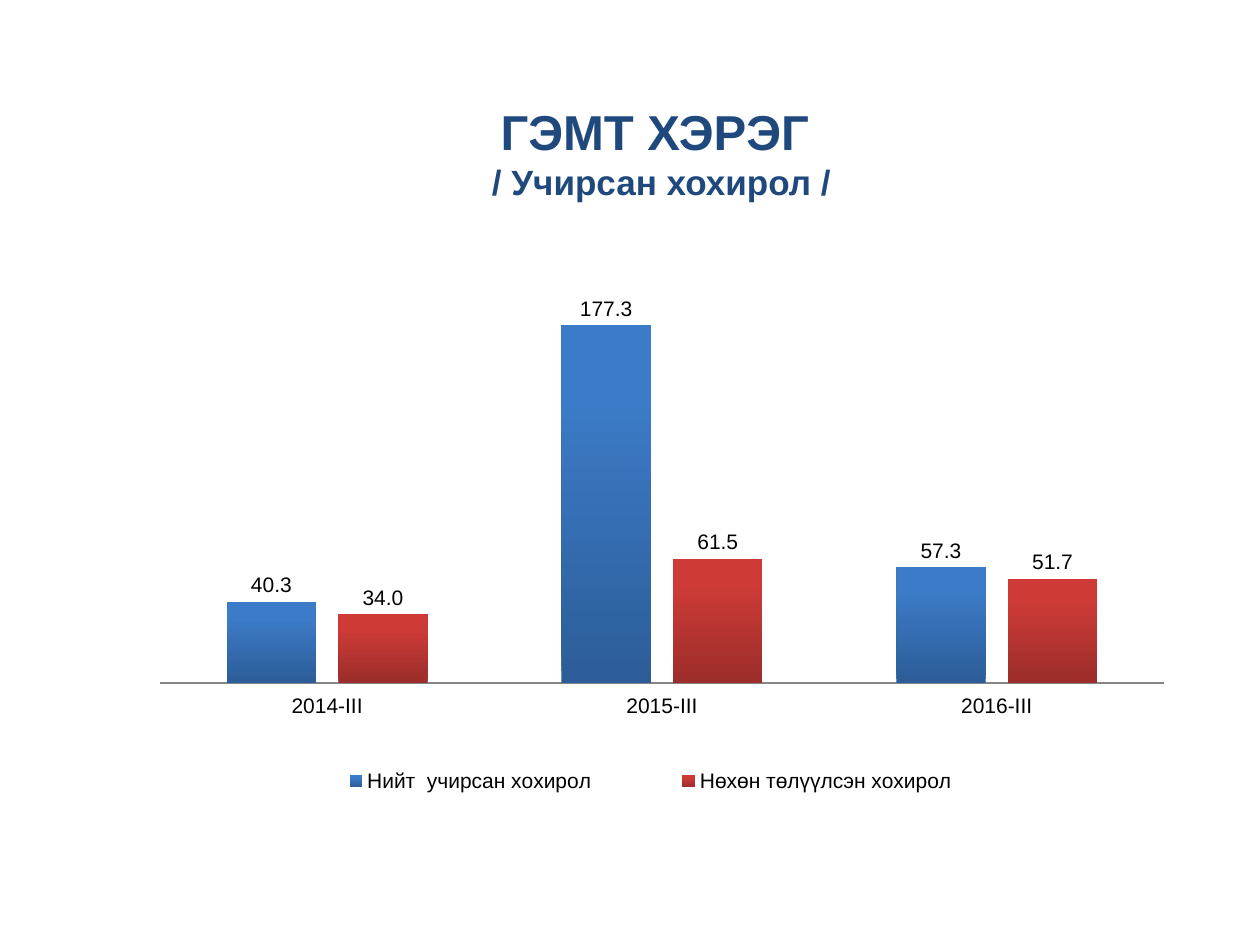
from lxml.etree import SubElement as Sub
from pptx import Presentation
from pptx.chart.data import CategoryChartData as Data
from pptx.dml.color import RGBColor as RGB
from pptx.enum.chart import XL_CHART_TYPE as Kind
from pptx.enum.chart import XL_LABEL_POSITION as Spot
from pptx.enum.chart import XL_LEGEND_POSITION as Side
from pptx.enum.chart import XL_TICK_LABEL_POSITION as Label
from pptx.enum.chart import XL_TICK_MARK as Tick
from pptx.enum.text import MSO_ANCHOR as Anchor
from pptx.enum.text import PP_ALIGN as Align
from pptx.oxml import parse_xml
from pptx.oxml.ns import nsdecls, qn
from pptx.util import Inches, Pt

FONT = "Arial"
COLORS = {"title": "1F497D", "text": "000000", "axis": "868686", "edge": "FFFFFF",
          "blue": ("2C5D98", "3C7BC7"), "red": ("9B2D2A", "CE3B37")}
PERIODS = ["2014-III", "2015-III", "2016-III"]
SERIES = [("Нийт  учирсан хохирол", (40.3, 177.3, 57.3), "blue"),
          ("Нөхөн төлүүлсэн хохирол", (34, 61.5, 51.7), "red")]


def style(font, size, color, bold=False):
    """Set the face, size, colour and weight of a font."""
    font.name, font.size, font.bold = FONT, Pt(size), bold
    font.color.rgb = RGB.from_string(COLORS[color])


def add_title(slide):
    """Add the two-line heading."""
    box = slide.shapes.add_textbox(Inches(1), Inches(0.58), Inches(8.5), Inches(1.25))
    frame = box.text_frame
    frame.word_wrap = True
    frame.vertical_anchor = Anchor.MIDDLE
    para = frame.paragraphs[0]
    para.alignment = Align.CENTER
    head = para.add_run()
    head.text = "ГЭМТ ХЭРЭГ "
    style(head.font, 28, "title", True)
    para.add_line_break()
    sub = para.add_run()
    sub.text = "/ Учирсан хохирол /"
    style(sub.font, 20, "title", True)


def make_layout(x, y, w, h, inner=False):
    """Return a manual layout in fractions of the chart."""
    layout = parse_xml(f"<c:layout {nsdecls('c')}><c:manualLayout/></c:layout>")
    manual = layout[0]
    parts = [("layoutTarget", "inner")] if inner else []
    parts += [("xMode", "edge"), ("yMode", "edge"), ("x", x), ("y", y), ("w", w), ("h", h)]
    for name, val in parts:
        Sub(manual, qn(f"c:{name}")).set("val", str(val))
    return layout


def place(parent, layout, after=None):
    """Put a layout into a chart part in place of any old one."""
    for old in parent.findall(qn("c:layout")):
        parent.remove(old)
    spot = 0 if after is None else parent.index(parent.find(qn(after))) + 1
    parent.insert(spot, layout)


def paint(series, key):
    """Shade the bars from dark at the foot to light."""
    series.invert_if_negative = False
    fill = series.format.fill
    fill.gradient()
    fill.gradient_angle = 90
    for stop, color, pos in zip(fill.gradient_stops, COLORS[key], (0, 0.8)):
        stop.color.rgb = RGB.from_string(color)
        stop.position = pos


def set_axes(chart):
    """Show the period axis and hide the value axis."""
    cat, val = chart.category_axis, chart.value_axis
    cat.major_tick_mark = cat.minor_tick_mark = Tick.NONE
    cat.tick_label_position = Label.LOW
    cat.format.line.color.rgb = RGB.from_string(COLORS["axis"])
    cat.format.line.width = Pt(0.75)
    val.minimum_scale, val.maximum_scale = 0, 200
    val.has_major_gridlines = False
    val.visible = False


def set_frame(chart):
    """Give the chart area its thin border."""
    edge = parse_xml(f'<c:spPr {nsdecls("c", "a")}><a:noFill/><a:ln w="{Pt(0.75)}"><a:solidFill>'
                     f'<a:srgbClr val="{COLORS["edge"]}"/></a:solidFill></a:ln></c:spPr>')
    chart.element.find(qn("c:chart")).addnext(edge)


def add_bars(slide):
    """Add the clustered column chart with labels and legend."""
    data = Data(number_format="0.0")
    data.categories = PERIODS
    for name, vals, _ in SERIES:
        data.add_series(name, vals)
    chart = slide.shapes.add_chart(Kind.COLUMN_CLUSTERED, Inches(1), Inches(1.75),
                                   Inches(8.5), Inches(4.95), data).chart
    style(chart.font, 12, "text")
    chart.has_title = False
    plot = chart.plots[0]
    plot.vary_by_categories = False
    plot.gap_width, plot.overlap = 150, -25
    for series, (_, _, key) in zip(plot.series, SERIES):
        paint(series, key)
        labels = series.data_labels
        labels.show_value = True
        labels.number_format, labels.number_format_is_linked = "0.0", False
        labels.position = Spot.OUTSIDE_END
        style(labels.font, 12, "text")
    set_axes(chart)
    chart.has_legend = True
    legend = chart.legend
    legend.position = Side.TOP
    legend.include_in_layout = False
    style(legend.font, 12, "text")
    area = chart.element.find(".//" + qn("c:plotArea"))
    place(area, make_layout(0.031, 0.094, 0.939, 0.648, True))
    key = chart.element.find(".//" + qn("c:legend"))
    place(key, make_layout(0.13, 0.86, 0.72, 0.08), "c:legendPos")
    set_frame(chart)


def main():
    """Build and save the slide."""
    deck = Presentation()
    deck.slide_width, deck.slide_height = Inches(10), Inches(7.5)
    slide = deck.slides.add_slide(deck.slide_layouts[6])
    add_title(slide)
    add_bars(slide)
    deck.save("out.pptx")


if __name__ == "__main__":
    main()
